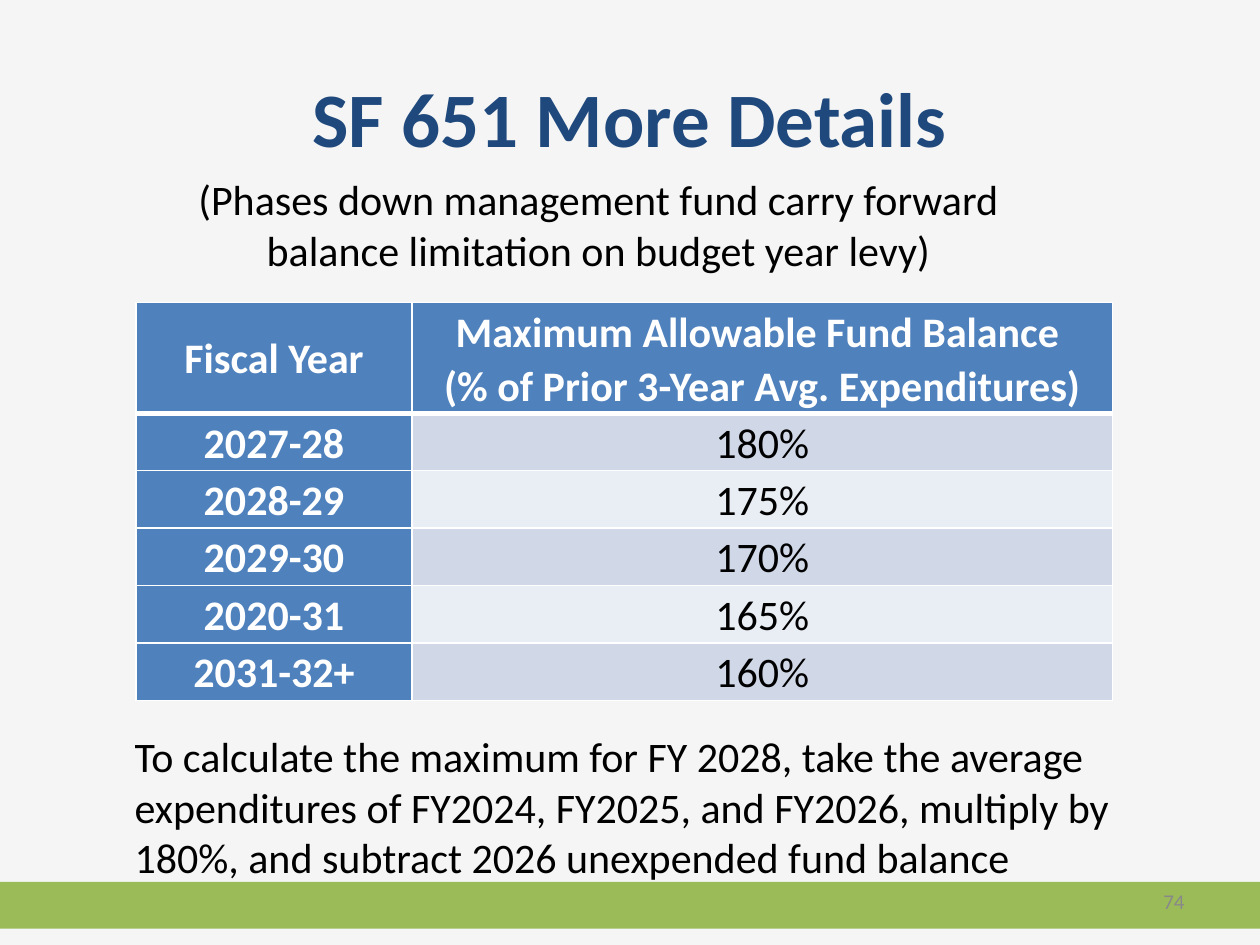
from dataclasses import dataclass

from lxml.etree import SubElement
from pptx import Presentation
from pptx.dml.color import RGBColor
from pptx.enum.shapes import MSO_SHAPE
from pptx.enum.text import MSO_ANCHOR, PP_ALIGN
from pptx.oxml.ns import qn
from pptx.util import Inches, Pt


@dataclass(frozen=True)
class Theme:
    font: str = "Calibri"
    title_size: int = 44
    body_size: int = 24
    number_size: int = 12
    background: str = "F5F5F5"
    title: str = "1F497D"
    text: str = "000000"
    white: str = "FFFFFF"
    number: str = "898989"
    footer: str = "9BBB59"
    header: str = "4F81BD"
    bands: tuple = ("D0D8E8", "E9EDF4")


THEME = Theme()
HEADINGS = ("Fiscal Year",
            "Maximum Allowable Fund Balance \v(% of Prior 3-Year Avg. Expenditures)")
LIMITS = [("2027-28", "180%"), ("2028-29", "175%"), ("2029-30", "170%"),
          ("2020-31", "165%"), ("2031-32+", "160%")]


def rgb(value):
    return RGBColor.from_string(value)


def write(tf, text, size, color, bold=False, align=PP_ALIGN.LEFT):
    tf.text = text
    tf.word_wrap = True
    p = tf.paragraphs[0]
    p.alignment = align
    for r in p.runs:
        r.font.name = THEME.font
        r.font.size = Pt(size)
        r.font.bold = bold
        r.font.color.rgb = rgb(color)
    return p


def add_title(s, box, text):
    sp = s.shapes.title
    sp.left, sp.top, sp.width, sp.height = box
    sp.text_frame.vertical_anchor = MSO_ANCHOR.MIDDLE
    write(sp.text_frame, text, THEME.title_size, THEME.title, True, PP_ALIGN.CENTER)


def add_text(s, box, text, size=THEME.body_size, color=THEME.text, align=PP_ALIGN.LEFT):
    sp = s.shapes.add_textbox(*box)
    write(sp.text_frame, text, size, color, align=align)
    return sp


def add_footer(s, box, number):
    left, top, width, height = box
    bar = s.shapes.add_shape(MSO_SHAPE.RECTANGLE, *box)
    bar.shadow.inherit = False
    bar.fill.solid()
    bar.fill.fore_color.rgb = rgb(THEME.footer)
    bar.line.fill.background()
    number_width = Inches(1)
    number_box = (left + width - Inches(0.5) - number_width, top - Inches(0.03),
                  number_width, height)
    sp = add_text(s, number_box, number, THEME.number_size, THEME.number, PP_ALIGN.RIGHT)
    sp.text_frame.vertical_anchor = MSO_ANCHOR.MIDDLE


def set_borders(cell, **widths):
    """Draw white borders; widths maps the sides L, R, T and B to points."""
    tc_pr = cell._tc.get_or_add_tcPr()
    for i, side in enumerate("LRTB"):
        ln = SubElement(tc_pr, qn(f"a:ln{side}"), w=str(Pt(widths.get(side, 1))))
        fill = SubElement(ln, qn("a:solidFill"))
        SubElement(fill, qn("a:srgbClr"), val=THEME.white)
        tc_pr.insert(i, ln)


def add_limits_table(s, box, headings, limits):
    left, top, width, height = box
    rows = [headings, *limits]
    table = s.shapes.add_table(len(rows), len(headings), *box).table
    table.columns[0].width = Inches(2.19)
    table.columns[1].width = width - Inches(2.19)
    header_height = Inches(0.88)
    for i, values in enumerate(rows):
        table.rows[i].height = (header_height if i == 0
                                else (height - header_height) // len(limits))
        for j, value in enumerate(values):
            cell = table.cell(i, j)
            heading = i == 0 or j == 0
            cell.vertical_anchor = MSO_ANCHOR.MIDDLE
            cell.margin_left = cell.margin_right = Inches(0.01)
            cell.margin_top = cell.margin_bottom = Inches(0.01)
            cell.fill.solid()
            cell.fill.fore_color.rgb = rgb(THEME.header if heading
                                           else THEME.bands[(i - 1) % 2])
            p = write(cell.text_frame, value, THEME.body_size,
                      THEME.white if heading else THEME.text, heading, PP_ALIGN.CENTER)
            p.line_spacing = 1.07
            set_borders(cell, T=3 if i == 1 else 1, B=3 if i == 0 else 1)


def inches(*values):
    return tuple(Inches(v) for v in values)


def main():
    prs = Presentation()
    prs.slide_width, prs.slide_height = inches(10, 7.5)
    s = prs.slides.add_slide(prs.slide_layouts[5])
    s.background.fill.solid()
    s.background.fill.fore_color.rgb = rgb(THEME.background)

    add_footer(s, inches(0, 7, 10, 0.37), "74")
    add_title(s, inches(0.5, 0.3, 9, 1.25), "SF 651 More Details")
    add_limits_table(s, inches(1.08, 2.4, 7.75, 3.16), HEADINGS, LIMITS)
    add_text(s, inches(1, 1.33, 7.5, 0.91),
             "(Phases down management fund carry forward balance limitation "
             "on budget year levy)", align=PP_ALIGN.CENTER)
    add_text(s, inches(0.97, 5.75, 7.95, 1.31),
             "To calculate the maximum for FY 2028, take the average expenditures of "
             "FY2024, FY2025, and FY2026, multiply by 180%, and subtract 2026 "
             "unexpended fund balance")
    prs.save("out.pptx")


if __name__ == "__main__":
    main()
